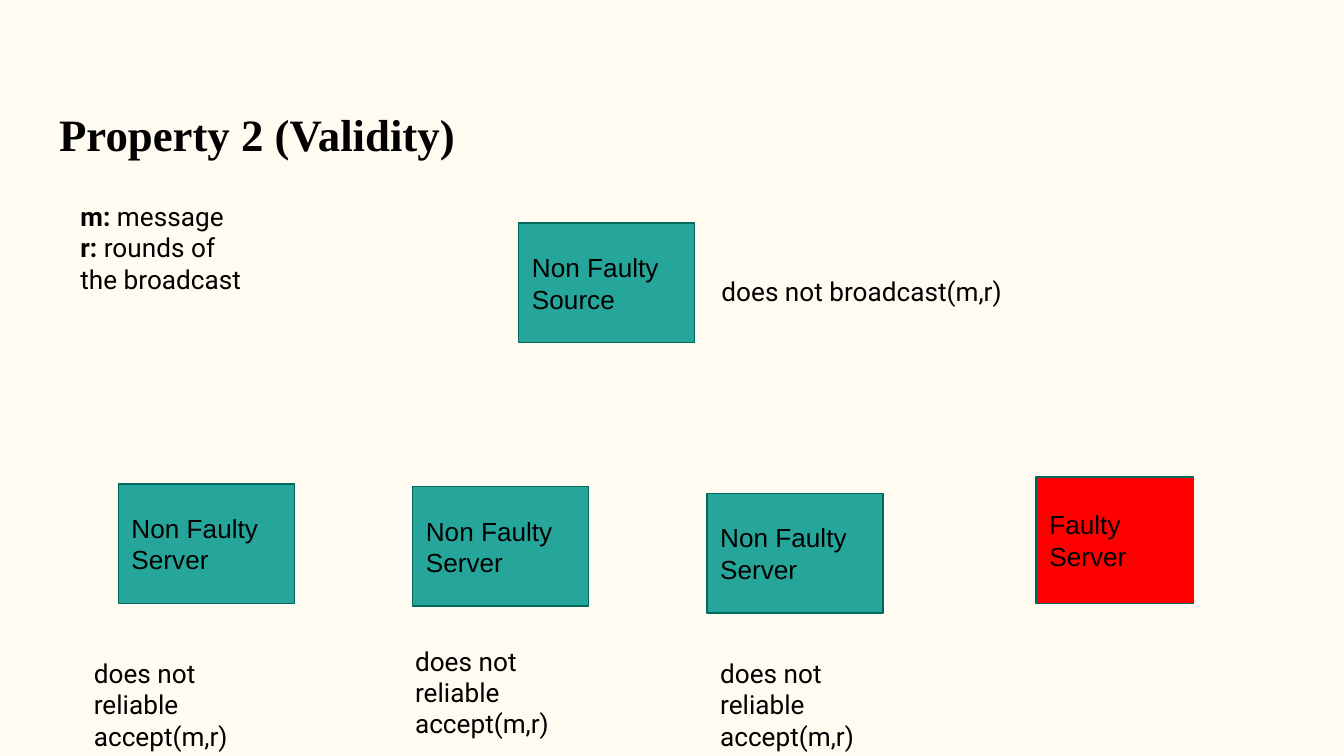
from pptx import Presentation
from pptx.dml.color import RGBColor
from pptx.enum.shapes import MSO_SHAPE
from pptx.enum.text import MSO_ANCHOR, MSO_AUTO_SIZE, PP_ALIGN
from pptx.util import Inches, Pt

CREAM = RGBColor(0xFF, 0xFB, 0xF0)
BLACK = RGBColor(0x00, 0x00, 0x00)
TEAL = RGBColor(0x26, 0xA6, 0x9A)
DARK_TEAL = RGBColor(0x00, 0x69, 0x5C)
RED = RGBColor(0xFF, 0x00, 0x00)


def write(shape, *lines, font="Roboto", size=14, anchor=MSO_ANCHOR.TOP, spacing=1.0):
    """Fill a shape with one paragraph per line; a line is (bold part, regular part)."""
    frame = shape.text_frame
    frame.word_wrap = True
    frame.auto_size = MSO_AUTO_SIZE.NONE
    frame.vertical_anchor = anchor
    frame.margin_left = frame.margin_right = Inches(0.1)
    frame.margin_top = frame.margin_bottom = Inches(0.1)
    for i, parts in enumerate(lines):
        paragraph = frame.paragraphs[0] if i == 0 else frame.add_paragraph()
        paragraph.alignment = PP_ALIGN.LEFT
        paragraph.line_spacing = spacing
        for text, bold in zip(parts, (True, False)):
            if text:
                run = paragraph.add_run()
                run.text = text
                run.font.name = font
                run.font.size = Pt(size)
                run.font.bold = bold
                run.font.color.rgb = BLACK


prs = Presentation()
prs.slide_width = Inches(10)
prs.slide_height = Inches(10) * 9 // 16
slide = prs.slides.add_slide(prs.slide_layouts[5])
slide.background.fill.solid()
slide.background.fill.fore_color.rgb = CREAM

title = slide.shapes.title
title.left, title.top = Inches(0.34), Inches(0.49)
title.width, title.height = Inches(9.32), Inches(0.67)
write(title, ("Property 2 (Validity)", ""), font="Times New Roman", size=24, spacing=1.5)

legend = slide.shapes.add_textbox(Inches(0.5), Inches(1.39), Inches(1.45), Inches(0.89))
write(legend, ("m:", " message"), ("r:", " rounds of the broadcast"))

# Processes taking part: text, left, top, width, height, fill
processes = [
    ("Non Faulty Source", 3.86, 1.66, 1.31, 0.89, TEAL),
    ("Non Faulty Server", 0.88, 3.6, 1.31, 0.89, TEAL),
    ("Non Faulty Server", 3.07, 3.62, 1.31, 0.89, TEAL),
    ("Non Faulty Server", 5.26, 3.67, 1.31, 0.89, TEAL),
    ("Faulty Server", 7.71, 3.55, 1.17, 0.94, RED),
]
for text, left, top, width, height, fill in processes:
    process = slide.shapes.add_shape(
        MSO_SHAPE.RECTANGLE, Inches(left), Inches(top), Inches(width), Inches(height)
    )
    process.shadow.inherit = False
    process.fill.solid()
    process.fill.fore_color.rgb = fill
    process.line.color.rgb = DARK_TEAL
    process.line.width = Pt(0.75)
    write(process, ("", text), font="Arial", anchor=MSO_ANCHOR.MIDDLE)

# What each non-faulty process does: text, left, top, width, height
behaviours = [
    ("does not broadcast(m,r)", 5.27, 1.95, 2.37, 0.4),
    ("does not reliable accept(m,r)", 0.6, 4.79, 1.59, 0.5),
    ("does not reliable accept(m,r)", 2.99, 4.7, 1.59, 0.5),
    ("does not reliable accept(m,r)", 5.26, 4.79, 1.59, 0.5),
]
for text, left, top, width, height in behaviours:
    behaviour = slide.shapes.add_textbox(
        Inches(left), Inches(top), Inches(width), Inches(height)
    )
    write(behaviour, ("", text))

prs.save("out.pptx")
